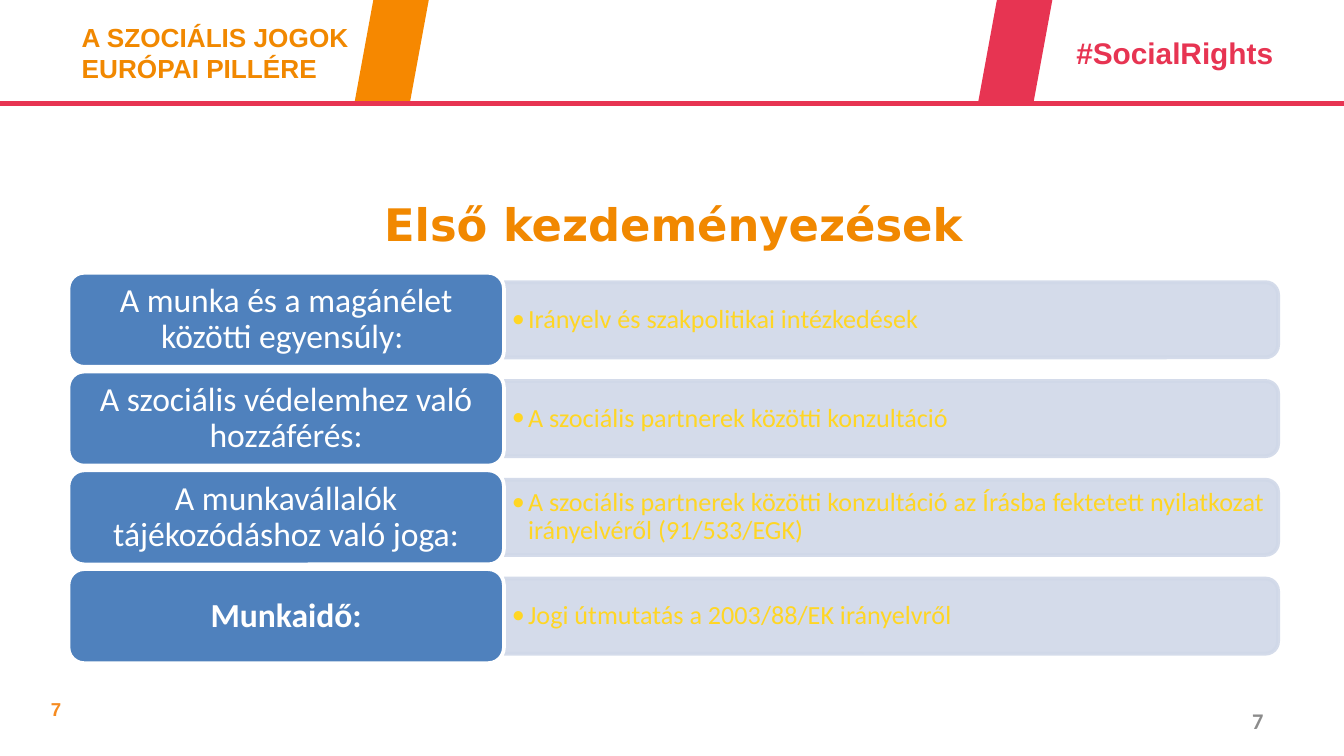
from dataclasses import dataclass

from lxml.etree import SubElement
from pptx import Presentation
from pptx.dml.color import RGBColor
from pptx.enum.shapes import MSO_CONNECTOR, MSO_SHAPE
from pptx.enum.text import MSO_ANCHOR, PP_ALIGN
from pptx.oxml.ns import qn
from pptx.util import Inches, Pt


@dataclass(frozen=True)
class Theme:
    orange: str = "F18800"
    amber: str = "F68800"
    page: str = "F68B20"
    red: str = "E73452"
    blue: str = "4F81BD"
    pale: str = "D0D8E8"
    yellow: str = "FFD624"
    white: str = "FFFFFF"
    grey: str = "8C8C8C"
    head: str = "Arial"
    title: str = "DejaVu Sans"
    body: str = "Calibri"
    tiny: int = 10
    small: int = 12
    text: int = 14
    tag: int = 16
    label: int = 18
    big: int = 24


THEME = Theme()

# Label, whether it is bold, detail
ROWS = [
    ("A munka és a magánélet közötti egyensúly: ", False,
     "Irányelv és szakpolitikai intézkedések"),
    ("A szociális védelemhez való hozzáférés:", False,
     "A szociális partnerek közötti konzultáció"),
    ("A munkavállalók tájékozódáshoz való joga:", False,
     "A szociális partnerek közötti konzultáció az Írásba fektetett "
     "nyilatkozat irányelvéről (91/533/EGK)"),
    ("Munkaidő:", True, "Jogi útmutatás a 2003/88/EK irányelvről"),
]
WIDTH = 10
LEFT, TOP = 0.51, 2.03
LABEL_W, LABEL_H = 3.24, 0.7
BAR_W, BAR_H = 5.76, 0.56
STEP = LABEL_H * 1.05


def tint(color):
    return RGBColor.from_string(color)


def fade(fill, percent):
    """Set the opacity of a solid fill element."""
    color = fill.find(qn("a:solidFill"))[0]
    SubElement(color, qn("a:alpha"), val=str(percent * 1000))


def write(shape, text, size, font, color, bold=False, align=PP_ALIGN.LEFT,
          anchor=MSO_ANCHOR.MIDDLE, pad=(0.1, 0.05), tight=False,
          bullet=False):
    frame = shape.text_frame
    frame.word_wrap = True
    frame.vertical_anchor = anchor
    frame.margin_left = frame.margin_right = Inches(pad[0])
    frame.margin_top = frame.margin_bottom = Inches(pad[1])
    para = frame.paragraphs[0]
    para.text = text
    para.alignment = align
    if tight:
        para.line_spacing = 0.9
    if bullet:
        props = para._p.get_or_add_pPr()
        props.set("marL", str(Inches(0.12)))
        props.set("indent", str(Inches(-0.12)))
        SubElement(props, qn("a:buFont"), typeface=font)
        SubElement(props, qn("a:buChar"), char="•")
    para.font.size = Pt(size)
    para.font.name = font
    para.font.bold = bold
    para.font.color.rgb = tint(color)


def add_text(slide, box, *args, **style):
    shape = slide.shapes.add_textbox(*map(Inches, box))
    write(shape, *args, **style)


def add_block(slide, kind, box, color, edge=None):
    shape = slide.shapes.add_shape(kind, *map(Inches, box))
    shape.shadow.inherit = False
    shape.fill.solid()
    shape.fill.fore_color.rgb = tint(color)
    if edge:
        shape.line.color.rgb = tint(edge)
        shape.line.width = Pt(2)
    else:
        shape.line.fill.background()
    return shape


def add_rule(slide, y, color):
    rule = slide.shapes.add_connector(
        MSO_CONNECTOR.STRAIGHT, 0, Inches(y), Inches(WIDTH), Inches(y))
    rule.line.color.rgb = tint(color)
    rule.line.width = Pt(2.25)
    SubElement(rule._element.spPr, qn("a:effectLst"))


def add_header(slide):
    t = THEME
    add_text(slide, (0.51, 0.11, 2.54, 0.57),
             "A SZOCIÁLIS JOGOK EURÓPAI PILLÉRE", t.text, t.head, t.orange,
             bold=True, anchor=MSO_ANCHOR.TOP)
    add_rule(slide, 0.77, t.red)
    add_text(slide, (7.91, 0.21, 2.09, 0.37), "#SocialRights", t.tag, t.head,
             t.red, bold=True, anchor=MSO_ANCHOR.TOP)
    for x, color in ((2.64, t.amber), (7.28, t.red)):
        add_block(slide, MSO_SHAPE.PARALLELOGRAM, (x, 0, 0.55, 0.75), color)


def add_row(slide, top, label, bold, detail):
    t = THEME
    mid = top + LABEL_H / 2
    start = LEFT + LABEL_W
    # The bar stands upright before its quarter turn about the centre.
    box = (start + (BAR_W - BAR_H) / 2, mid - BAR_W / 2, BAR_H, BAR_W)
    bar = add_block(slide, MSO_SHAPE.ROUND_2_SAME_RECTANGLE, box, t.pale,
                    t.pale)
    bar.rotation = 90
    props = bar._element.spPr
    fade(props, 90)
    fade(props.find(qn("a:ln")), 90)
    add_text(slide, (start, mid - 0.25, 5.73, 0.5), detail, t.text, t.body,
             t.yellow, pad=(0.06, 0.03), tight=True, bullet=True)
    card = add_block(slide, MSO_SHAPE.ROUNDED_RECTANGLE,
                     (LEFT, top, LABEL_W, LABEL_H), t.blue, t.white)
    write(card, label, t.label, t.body, t.white, bold=bold,
          align=PP_ALIGN.CENTER, pad=(0.1, 0.04), tight=True)


def main():
    t = THEME
    deck = Presentation()
    deck.slide_width = Inches(WIDTH)
    deck.slide_height = Inches(WIDTH * 9 / 16)
    slide = deck.slides.add_slide(deck.slide_layouts[6])
    add_header(slide)
    add_text(slide, (0.28, 5.14, 2.18, 0.27), "7", t.tiny, t.head, t.page,
             bold=True, anchor=MSO_ANCHOR.TOP)
    add_text(slide, (LEFT, 1.28, 9, 0.77), "Első kezdeményezések", t.big,
             t.title, t.orange, bold=True, align=PP_ALIGN.CENTER)
    add_text(slide, (7.17, 5.21, 2.33, 0.3), "7", t.small, t.body, t.grey,
             bold=True, align=PP_ALIGN.RIGHT)
    for i, row in enumerate(ROWS):
        add_row(slide, TOP + i * STEP, *row)
    deck.save("out.pptx")


if __name__ == "__main__":
    main()
